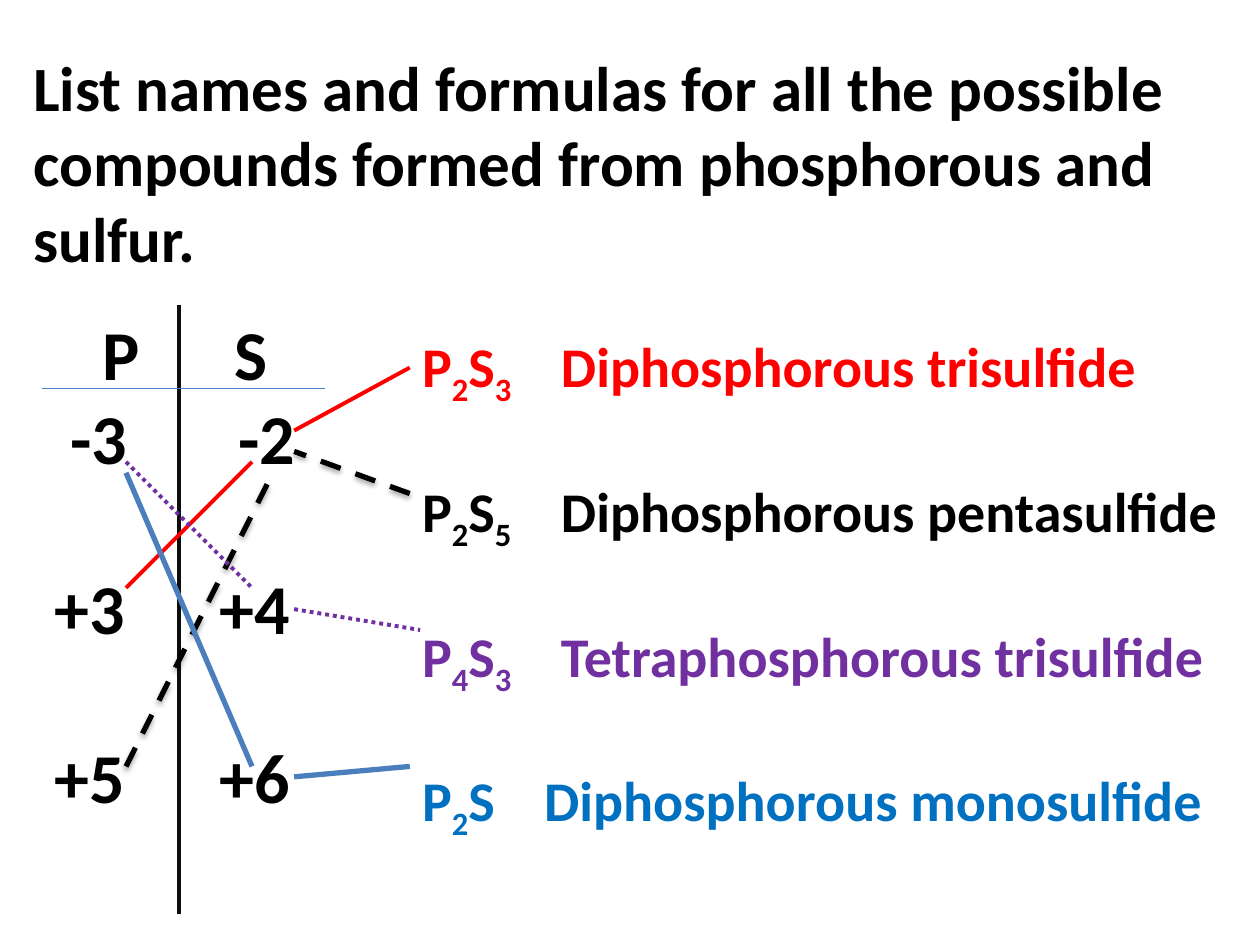
from dataclasses import dataclass

from lxml import etree
from pptx import Presentation, util as u
from pptx.dml.color import RGBColor
from pptx.enum import dml, shapes, text
from pptx.oxml import ns

BLACK, RED, PURPLE = "000000", "FF0000", "7030A0"
BLUE, STEEL, INK = "0070C0", "4B7EBC", "0D0D0D"
DASH, DOT = dml.MSO_LINE.DASH, dml.MSO_LINE.ROUND_DOT


@dataclass
class Box:
    left: float
    top: float
    width: float
    height: float


@dataclass
class Line:
    start: tuple[float, float]
    end: tuple[float, float]
    color: str
    width: float
    dash: object = None
    shade: bool = False


@dataclass
class Row:
    """Paired charges, with the tab stops that place them."""
    words: str
    stops: tuple[float, ...]
    gap: float = 0


@dataclass
class Result:
    """A formula, whose digits are lowered, and its name."""
    formula: str
    name: str
    color: str
    stop: float


def paint(color: str) -> RGBColor:
    return RGBColor.from_string(color)


def add_frame(slide, box: Box):
    shape = slide.shapes.add_textbox(
        u.Cm(box.left), u.Cm(box.top), u.Cm(box.width), u.Cm(box.height))
    frame = shape.text_frame
    frame.word_wrap = True
    frame.auto_size = text.MSO_AUTO_SIZE.SHAPE_TO_FIT_TEXT
    return frame


def add_run(para, words: str, size: float, color: str = BLACK, base: int = 0) -> None:
    run = para.add_run()
    run.text = words
    style = {"name": "Calibri", "size": u.Pt(size), "bold": True}
    for key, value in style.items():
        setattr(run.font, key, value)
    run.font.color.rgb = paint(color)
    if base:
        run.font._element.set("baseline", str(base * 1000))


def add_para(frame, index: int, gap: float, stops: tuple[float, ...]):
    para = frame.add_paragraph() if index else frame.paragraphs[0]
    para.space_before = u.Pt(gap)
    tabs = etree.SubElement(para._p.get_or_add_pPr(), ns.qn("a:tabLst"))
    for stop in stops:
        etree.SubElement(tabs, ns.qn("a:tab"), pos=str(u.Cm(stop)), algn="l")
    return para


def add_line(slide, line: Line) -> None:
    ends = [u.Cm(n) for n in (*line.start, *line.end)]
    link = slide.shapes.add_connector(shapes.MSO_CONNECTOR.STRAIGHT, *ends)
    link.line.color.rgb = paint(line.color)
    style = {"width": u.Pt(line.width), "dash_style": line.dash}
    for key, value in style.items():
        setattr(link.line, key, value)
    fx = etree.SubElement(link._element.spPr, ns.qn("a:effectLst"))
    if line.shade:
        shadow = etree.SubElement(
            fx, ns.qn("a:outerShdw"), blurRad=str(u.Pt(3.1)),
            dist=str(u.Pt(1.8)), dir="5400000", rotWithShape="0")
        tone = etree.SubElement(shadow, ns.qn("a:srgbClr"), val=BLACK)
        etree.SubElement(tone, ns.qn("a:alpha"), val="35000")


TASK = ("List names and formulas for all the possible compounds "
        "formed from phosphorous and sulfur.")

ROWS = [
    Row("\tP\tS", (0.96, 3.62)),
    Row("\t-3\t-2", (0.32, 3.7)),
    Row("+3\t+4", (3.33,), 48.8),
    Row("+5\t+6", (3.33,), 48.8),
]

RESULTS = [
    Result("P2S3", "Diphosphorous trisulfide", RED, 2.8),
    Result("P2S5", "Diphosphorous pentasulfide", BLACK, 2.8),
    Result("P4S3", "Tetraphosphorous trisulfide", PURPLE, 2.8),
    Result("P2S", "Diphosphorous monosulfide", BLUE, 2.46),
]

AXES = [
    Line((3.6, 6.14), (3.6, 18.42), INK, 2.25),
    Line((0.85, 7.83), (6.56, 7.83), STEEL, 0.75),
]

# Each pair of charges is joined, then led to its formula
LINKS = [
    Line((2.54, 11.85), (5.08, 9.31), RED, 2.25),
    Line((8.26, 7.41), (5.93, 8.68), RED, 2.25),
    Line((2.54, 15.45), (5.5, 9.53), BLACK, 3, DASH, True),
    Line((8.26, 9.95), (5.93, 9.1), BLACK, 3, DASH, True),
    Line((2.54, 9.31), (5.08, 11.85), PURPLE, 2.25, DOT),
    Line((5.93, 12.28), (8.47, 12.7), PURPLE, 2.25, DOT),
    Line((2.54, 9.53), (5.08, 15.45), STEEL, 3),
    Line((8.26, 15.45), (5.93, 15.66), STEEL, 3),
]


def main() -> None:
    deck = Presentation()
    deck.slide_width, deck.slide_height = u.Cm(25.4), u.Cm(19.05)
    slide = deck.slides.add_slide(deck.slide_layouts[6])

    # Task
    frame = add_frame(slide, Box(0.42, 0.85, 24.34, 4.88))
    add_run(frame.paragraphs[0], TASK, 36)

    # Charges
    frame = add_frame(slide, Box(0.85, 6.14, 5.72, 10.52))
    for i, row in enumerate(ROWS):
        add_run(add_para(frame, i, row.gap, row.stops), row.words, 40)
    for line in AXES:
        add_line(slide, line)

    # Formulas and names
    frame = add_frame(slide, Box(8.26, 6.56, 17.15, 9.83))
    for i, item in enumerate(RESULTS):
        para = add_para(frame, i, 39 if i else 0, (item.stop,))
        for sign in item.formula:
            add_run(para, sign, 32, item.color, -25 if sign.isdigit() else 0)
        add_run(para, "\t" + item.name, 32, item.color)

    # Links
    for line in LINKS:
        add_line(slide, line)

    deck.save("out.pptx")


if __name__ == "__main__":
    main()
